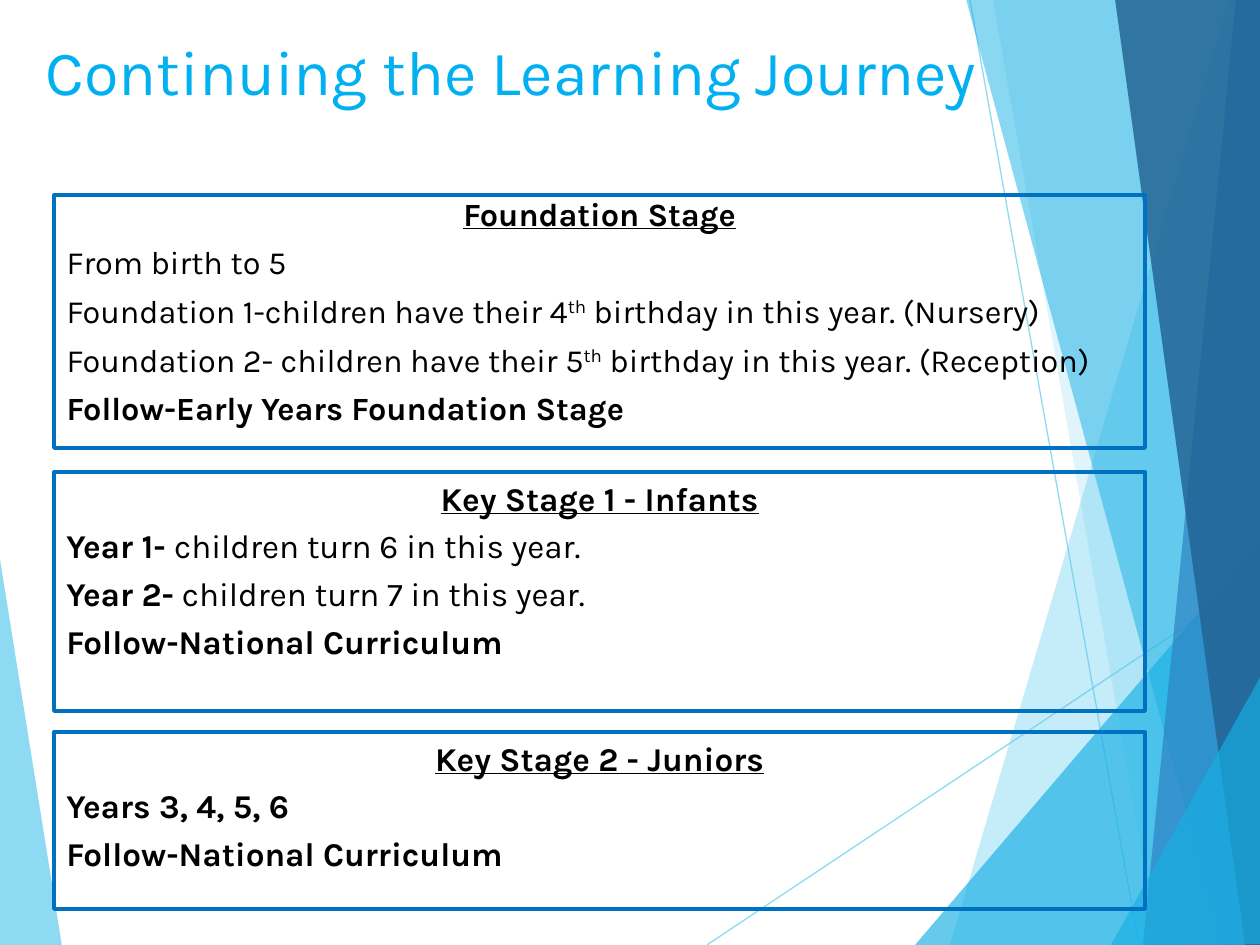
from lxml.etree import SubElement
from pptx import Presentation
from pptx.dml.color import RGBColor
from pptx.enum.shapes import MSO_CONNECTOR, MSO_SHAPE
from pptx.enum.text import MSO_ANCHOR, MSO_AUTO_SIZE, PP_ALIGN
from pptx.oxml.ns import qn
from pptx.util import Pt

PX = 7257  # EMU per px, 126 px to the inch
FONT = "Karla"
SKY, CYAN, BLUE, NAVY = "5FCBEF", "17B0E4", "2E83C3", "226292"

# Content: a line is a list of (text, style); b bold, u underlined, ^ raised
TITLE = "Continuing the Learning Journey"
FOUNDATION = [
    [("Foundation Stage", "bu")],
    [("From birth to 5", "")],
    [("Foundation 1-children have their 4", ""), ("th", "^"),
     (" birthday in this year. (Nursery)", "")],
    [("Foundation 2- children have their 5", ""), ("th", "^"),
     (" birthday in this year. (Reception)", "")],
    [("Follow-Early Years Foundation Stage", "b")],
]
INFANTS = [
    [("Key Stage 1 - Infants", "bu")],
    [("Year 1- ", "b"), ("children turn 6 in this year.", "")],
    [("Year 2-", "b"), (" children turn 7 in this year.", "")],
    [("Follow-National Curriculum", "b")],
]
JUNIORS = [
    [("Key Stage 2 - Juniors", "bu")],
    [("Years 3, 4, 5, 6", "b")],
    [("Follow-National Curriculum", "b")],
]

# Background: corner points in px, colour, opacity in percent
LEFT_WEDGE = ([(-1, 553), (62, 946), (-1, 945)], SKY, 70)
RAYS = [(707, 945, 1261, 576), (970, 0, 1139, 945)]
FACETS = [
    ([(1229, 0), (950, 945), (1262, 946), (1261, 1)], SKY, 36),
    ([(993, -1), (1158, 945), (1261, 945), (1261, -1)], SKY, 20),
    ([(915, 945), (1260, 541), (1261, 945)], CYAN, 66),
    ([(966, -1), (1222, 945), (1261, 944), (1261, -1)], CYAN, 50),
    ([(1236, -1), (1143, 945), (1261, 945), (1260, -1)], BLUE, 70),
    ([(1115, -1), (1245, 945), (1262, 945), (1260, -1)], NAVY, 82),
    ([(1111, 945), (1262, 674), (1262, 944)], CYAN, 66),
]
BOX_LEFT, BOX_WIDTH = 54, 1091


def rgb(code):
    return RGBColor.from_string(code)


def set_opacity(shape, percent):
    for clr in shape._element.spPr.iter(qn("a:srgbClr")):
        SubElement(clr, qn("a:alpha")).set("val", str(percent * 1000))


def add_facet(s, points, color, opacity):
    fb = s.shapes.build_freeform(*points[0], scale=PX)
    fb.add_line_segments(points[1:], close=True)
    sp = fb.convert_to_shape()
    sp.shadow.inherit = False
    sp.fill.solid()
    sp.fill.fore_color.rgb = rgb(color)
    sp.line.fill.background()
    set_opacity(sp, opacity)


def add_ray(s, *ends):
    cx = s.shapes.add_connector(MSO_CONNECTOR.STRAIGHT, *[v * PX for v in ends])
    cx.line.color.rgb = rgb(SKY)
    cx.line.width = Pt(0.75)
    set_opacity(cx, 70)
    SubElement(cx._element.spPr, qn("a:effectLst"))


def place(sp, left, top, width, height):
    sp.left, sp.top, sp.width, sp.height = [v * PX for v in (left, top, width, height)]
    tf = sp.text_frame
    tf.word_wrap = True
    tf.auto_size = MSO_AUTO_SIZE.NONE
    tf.vertical_anchor = MSO_ANCHOR.TOP


def add_run(p, text, size, color="000000", style=""):
    r = p.add_run()
    r.text = text
    f = r.font
    f.name, f.size, f.color.rgb = FONT, Pt(size), rgb(color)
    f.bold, f.underline = "b" in style, "u" in style
    if "^" in style:
        r._r.get_or_add_rPr().set("baseline", "30000")


def fill_box(sp, lines, top, height, size, indent, before, spacing=1.0):
    place(sp, BOX_LEFT, top, BOX_WIDTH, height)
    sp.fill.background()
    sp.line.color.rgb = rgb("0070C0")
    sp.line.width = Pt(2.25)
    tf = sp.text_frame
    for i, line in enumerate(lines):
        p = tf.add_paragraph() if i else tf.paragraphs[0]
        p.alignment = PP_ALIGN.LEFT if i else PP_ALIGN.CENTER
        p.line_spacing, p.space_before = spacing, Pt(before)
        pPr = p._p.get_or_add_pPr()
        pPr.set("marL", str(indent * PX))
        pPr.set("indent", str(-indent * PX))
        SubElement(pPr, qn("a:buNone"))
        for text, style in line:
            add_run(p, text, size, style=style)


prs = Presentation()
prs.slide_width, prs.slide_height = 1260 * PX, 945 * PX
s = prs.slides.add_slide(prs.slide_layouts[1])
title, body = s.placeholders

# Background
add_facet(s, *LEFT_WEDGE)
for ray in RAYS:
    add_ray(s, *ray)
for facet in FACETS:
    add_facet(s, *facet)

# Title and body go in front of the background
for ph in (title, body):
    s.shapes.element.append(ph.element)
place(title, 33, 26, 1134, 127)
p = title.text_frame.paragraphs[0]
p.alignment = PP_ALIGN.LEFT
add_run(p, TITLE, 36, "00B0F0")

# Stage boxes
fill_box(body, FOUNDATION, 195, 253, 18.5, 38, 10, 0.8)
for lines, top, height in [(INFANTS, 472, 239), (JUNIORS, 732, 177)]:
    sp = s.shapes.add_shape(MSO_SHAPE.RECTANGLE, 0, 0, PX, PX)
    sp.shadow.inherit = False
    fill_box(sp, lines, top, height, 19, 48, 4.4)

prs.save("out.pptx")
